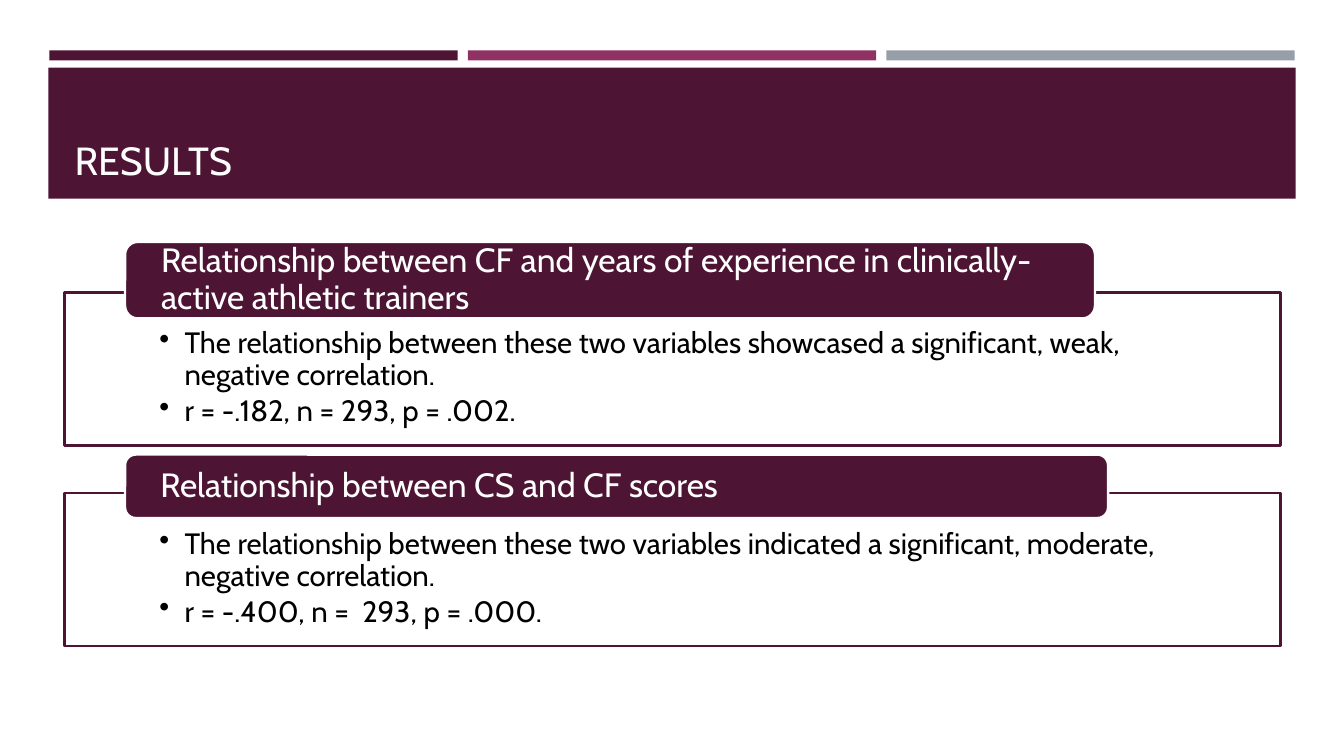
import pptx
import pptx.dml.color
import pptx.enum.shapes
import pptx.enum.text
import pptx.oxml
import pptx.oxml.ns
import pptx.util
from pptx.util import Inches

FONT = "Cabin"
PLUM, MAGENTA, GREY = "4D1434", "903163", "969FA7"
WHITE, BLACK = "FFFFFF", "000000"
SHAPE = pptx.enum.shapes.MSO_SHAPE
ANCHOR = pptx.enum.text.MSO_ANCHOR
FINDINGS = [
    {
        "top": 2.4, "label_size": (9.62, 0.76), "frame_top": 2.9,
        "heading": "Relationship between CF and years of experience in clinically-active athletic trainers",
        "points": [
            "The relationship between these two variables showcased a significant, weak, negative correlation.",
            "r = -.182, n = 293, p = .002.",
        ],
    },
    {
        "top": 4.51, "label_size": (9.75, 0.63), "frame_top": 4.89,
        "heading": "Relationship between CS and CF scores",
        "points": [
            "The relationship between these two variables indicated a significant, moderate, negative correlation.",
            "r = -.400, n =  293, p = .000.",
        ],
    },
]


def color(value):
    """Turn a hex string into a colour."""
    return pptx.dml.color.RGBColor.from_string(value)


def add_block(page, kind, left, top, width, height, fill, line=None):
    """Add a filled shape, outlined when a line colour is given."""
    box = page.shapes.add_shape(kind, Inches(left), Inches(top), Inches(width), Inches(height))
    box.shadow.inherit = False
    box.fill.solid()
    box.fill.fore_color.rgb = color(fill)
    if line:
        box.line.color.rgb = color(line)
        box.line.width = pptx.util.Pt(1.75)
    else:
        box.line.fill.background()
    return box


def set_frame(box, anchor, left=0.1, top=0.05, right=0.1, bottom=0.05):
    """Set wrapping, anchor and insets of a text frame."""
    frame = box.text_frame
    frame.word_wrap = True
    frame.auto_size = pptx.enum.text.MSO_AUTO_SIZE.NONE
    frame.vertical_anchor = anchor
    frame.margin_left, frame.margin_top = Inches(left), Inches(top)
    frame.margin_right, frame.margin_bottom = Inches(right), Inches(bottom)
    return frame


def write(para, text, size, ink, spacing=0.9, after=0, bullet=False):
    """Write one left-aligned paragraph in the given format."""
    para.alignment = pptx.enum.text.PP_ALIGN.LEFT
    para.line_spacing = spacing
    para.space_after = pptx.util.Pt(after)
    span = para.add_run()
    span.text = text
    span.font.name = FONT
    span.font.size = pptx.util.Pt(size)
    span.font.color.rgb = color(ink)
    if bullet:
        properties = para._p.get_or_add_pPr()
        properties.set("marL", str(Inches(0.25)))
        properties.set("indent", str(-Inches(0.25)))
        mark = pptx.oxml.parse_xml(f'<a:buChar {pptx.oxml.ns.nsdecls("a")} char="•"/>')
        properties.append(mark)


def add_banner(page, left, top, width):
    """Place the three accent strips, the band and the title."""
    for index, fill in enumerate((PLUM, MAGENTA, GREY)):
        add_block(page, SHAPE.RECTANGLE, left + 0.01 + 4.15 * index, top, 4.05, 0.1, fill)
    band = add_block(page, SHAPE.RECTANGLE, left, top + 0.17, width, 1.3, PLUM)
    title = page.shapes.title
    title.left, title.top = Inches(left + 0.16), Inches(top + 0.27)
    title.width, title.height = Inches(width - 0.31), Inches(1.11)
    write(set_frame(title, ANCHOR.BOTTOM).paragraphs[0], "RESULTS", 28, "FFFEFF")
    band.element.addnext(title.element)


def add_finding(page, left, width, finding):
    """Place an outlined box of points with its heading label on the top edge."""
    body = add_block(page, SHAPE.RECTANGLE, left, finding["frame_top"], width, 1.52, WHITE, PLUM)
    frame = set_frame(body, ANCHOR.TOP, 0.94, 0.36, 0.94, 0.16)
    for index, point in enumerate(finding["points"]):
        para = frame.add_paragraph() if index else frame.paragraphs[0]
        write(para, point, 21, BLACK, after=3, bullet=True)
    label = add_block(page, SHAPE.ROUNDED_RECTANGLE, left + 0.6, finding["top"],
                      *finding["label_size"], PLUM, WHITE)
    heading = set_frame(label, ANCHOR.MIDDLE, 0.32, 0, 0.32, 0)
    write(heading.paragraphs[0], finding["heading"], 24, WHITE)


def main():
    """Build the results slide and save it."""
    deck = pptx.Presentation()
    deck.slide_width, deck.slide_height = Inches(13.33), Inches(7.5)
    page = deck.slides.add_slide(deck.slide_layouts.get_by_name("Title Only"))
    add_banner(page, 0.48, 0.5, 12.37)
    for finding in FINDINGS:
        add_finding(page, 0.64, 12.06, finding)
    deck.save("out.pptx")


if __name__ == "__main__":
    main()
